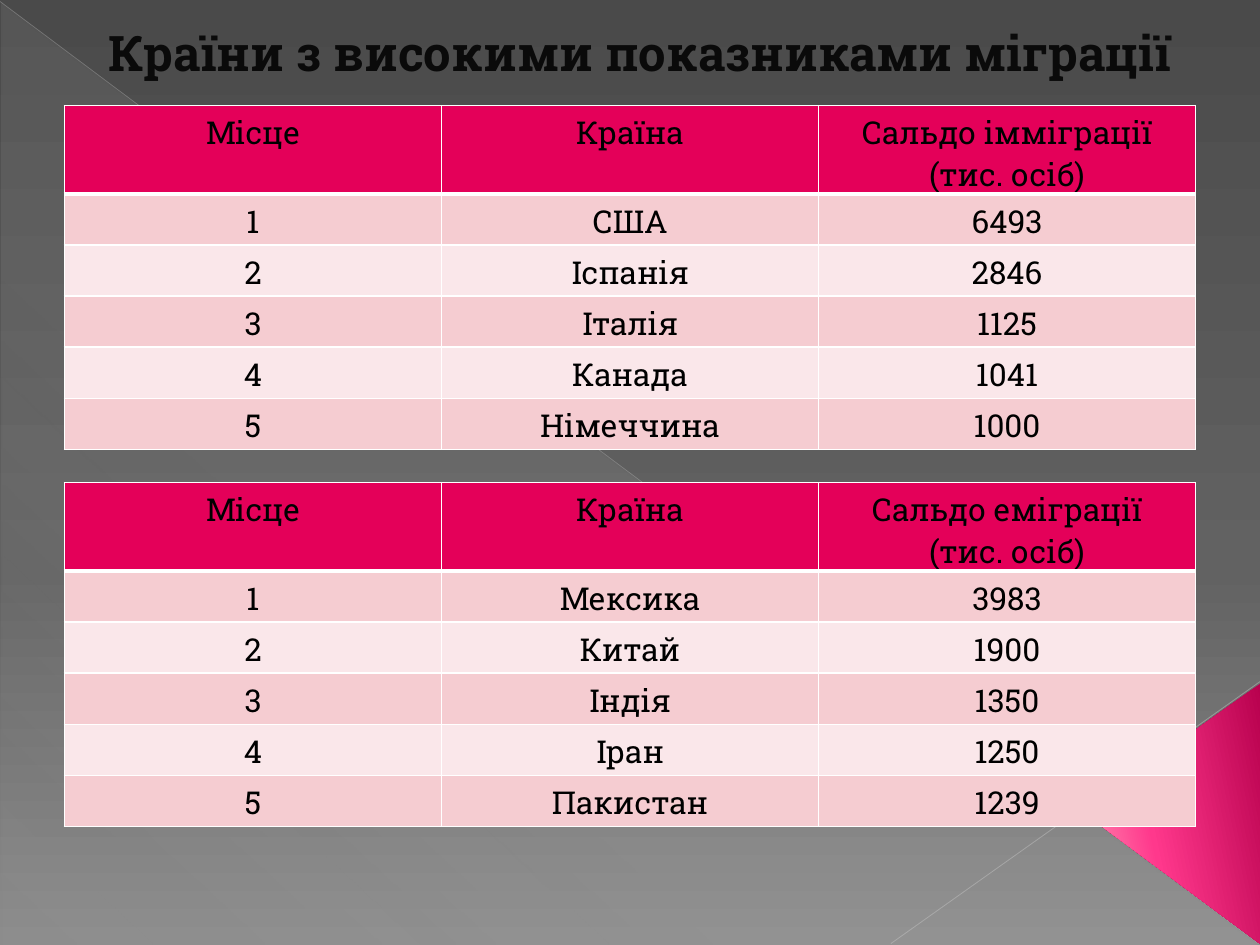
from dataclasses import dataclass

from lxml.etree import SubElement
from pptx import Presentation
from pptx.dml.color import RGBColor
from pptx.enum.shapes import MSO_CONNECTOR, MSO_SHAPE
from pptx.enum.text import MSO_AUTO_SIZE, PP_ALIGN
from pptx.oxml.ns import qn
from pptx.util import Cm, Pt

FONT = "Roboto Slab"
HEADER_FILL = "E40059"
BAND_FILLS = ("F5CCD1", "FAE7EA")
BORDER = "FFFFFF"
TABLE_LEFT, COLUMN_WIDTH = 1.3, 7.6
HEADER_HEIGHT, ROW_HEIGHT = 1.78, 1.03


@dataclass
class Stop:
    position: int
    color: str
    opacity: int = 100


@dataclass
class Ray:
    start: tuple[float, float]
    end: tuple[float, float]
    color: str
    width: float
    opacity: int


@dataclass
class Ranking:
    top: float
    balance: str
    countries: list[tuple[str, int]]


BACKDROP = [Stop(0, "4A4A4A"), Stop(60, "626262"), Stop(100, "8C8C8C")]
SHEEN = [Stop(0, "D2D2D2", 10), Stop(70, "D2D2D2", 8), Stop(100, "D2D2D2", 1)]
CORNER = [Stop(0, "B8014E"), Stop(60, "FF388C"), Stop(100, "FF9CB9")]
RAYS = [
    Ray((0, 0.03), (25.37, 19.02), "BFBFBF", 0.39, 35),
    Ray((25.4, 13.74), (17.96, 19.02), "C6C6C6", 0.47, 45),
]
RANKINGS = [
    Ranking(2.13, "Сальдо імміграції (тис. осіб)", [
        ("США", 6493), ("Іспанія", 2846), ("Італія", 1125),
        ("Канада", 1041), ("Німеччина", 1000)]),
    Ranking(9.73, "Сальдо еміграції (тис. осіб)", [
        ("Мексика", 3983), ("Китай", 1900), ("Індія", 1350),
        ("Іран", 1250), ("Пакистан", 1239)]),
]


def rgb(color: str) -> RGBColor:
    return RGBColor.from_string(color)


def add_color(parent, color: str, opacity: int = 100) -> None:
    value = SubElement(parent, qn("a:srgbClr"), val=color)
    if opacity < 100:
        SubElement(value, qn("a:alpha"), val=str(opacity * 1000))


def set_gradient(fill, owner, stops: list[Stop], angle: int) -> None:
    fill.gradient()
    gradient = next(owner.iter(qn("a:gradFill")))
    for child in list(gradient):
        gradient.remove(child)
    stop_list = SubElement(gradient, qn("a:gsLst"))
    for stop in stops:
        mark = SubElement(stop_list, qn("a:gs"), pos=str(stop.position * 1000))
        add_color(mark, stop.color, stop.opacity)
    SubElement(gradient, qn("a:lin"), ang=str(angle * 60000), scaled="0")


def add_triangle(slide, kind, box: tuple[float, ...], stops: list[Stop], angle: int):
    triangle = slide.shapes.add_shape(kind, *map(Cm, box))
    triangle.shadow.inherit = False
    triangle.line.fill.background()
    set_gradient(triangle.fill, triangle.element, stops, angle)
    return triangle


def add_ray(slide, ray: Ray) -> None:
    line = slide.shapes.add_connector(
        MSO_CONNECTOR.STRAIGHT, *map(Cm, ray.start + ray.end))
    line.line.width = Pt(ray.width)
    line.line.color.rgb = rgb(ray.color)
    color = next(line.element.iter(qn("a:srgbClr")))
    SubElement(color, qn("a:alpha"), val=str(ray.opacity * 1000))
    SubElement(line.element.spPr, qn("a:effectLst"))


def write(frame, words: str, size: int, color: str, bold: bool = False) -> None:
    frame.text = words
    paragraph = frame.paragraphs[0]
    paragraph.alignment = PP_ALIGN.CENTER
    font = paragraph.runs[0].font
    font.name, font.size, font.bold = FONT, Pt(size), bold
    font.color.rgb = rgb(color)


def fill_cell(cell, words: str, fill: str, bottom_border: int) -> None:
    write(cell.text_frame, words, 18, "000000")
    properties = cell._tc.get_or_add_tcPr()
    for side in ("lnL", "lnR", "lnT", "lnB"):
        width = bottom_border if side == "lnB" else 1
        edge = SubElement(properties, qn(f"a:{side}"), w=str(Pt(width)))
        add_color(SubElement(edge, qn("a:solidFill")), BORDER)
    cell.fill.solid()
    cell.fill.fore_color.rgb = rgb(fill)


def add_ranking(slide, ranking: Ranking) -> None:
    rows = [("Місце", "Країна", ranking.balance)]
    rows += [(str(place), country, str(balance))
             for place, (country, balance) in enumerate(ranking.countries, 1)]
    height = HEADER_HEIGHT + ROW_HEIGHT * len(ranking.countries)
    table = slide.shapes.add_table(
        len(rows), 3, Cm(TABLE_LEFT), Cm(ranking.top),
        Cm(3 * COLUMN_WIDTH), Cm(height)).table
    for column in table.columns:
        column.width = Cm(COLUMN_WIDTH)
    for index, row in enumerate(rows):
        is_header = index == 0
        table.rows[index].height = Cm(HEADER_HEIGHT if is_header else ROW_HEIGHT)
        fill = HEADER_FILL if is_header else BAND_FILLS[(index - 1) % 2]
        for column, words in enumerate(row):
            fill_cell(table.cell(index, column), words, fill, 3 if is_header else 1)


def main() -> None:
    deck = Presentation()
    deck.slide_width, deck.slide_height = Cm(25.4), Cm(19.05)
    slide = deck.slides.add_slide(deck.slide_layouts[6])

    # Background and decoration
    set_gradient(slide.background.fill, slide.element, BACKDROP, 90)
    add_triangle(slide, MSO_SHAPE.RIGHT_TRIANGLE, (0.03, 0.05, 25.35, 19), SHEEN, 133)
    for ray in RAYS:
        add_ray(slide, ray)
    corner = add_triangle(
        slide, MSO_SHAPE.ISOSCELES_TRIANGLE, (20.98, 14.6, 5.26, 3.61), CORNER, 258)
    corner.adjustments[0] = 0.51
    corner.rotation = 270

    # Title
    title = slide.shapes.add_textbox(Cm(0.69), Cm(0.33), Cm(24.41), Cm(1.45)).text_frame
    title.word_wrap = True
    title.auto_size = MSO_AUTO_SIZE.SHAPE_TO_FIT_TEXT
    write(title, "Країни з високими показниками міграції", 28, "0A0A0A", bold=True)

    # Immigration and emigration tables
    for ranking in RANKINGS:
        add_ranking(slide, ranking)

    deck.save("out.pptx")


if __name__ == "__main__":
    main()
